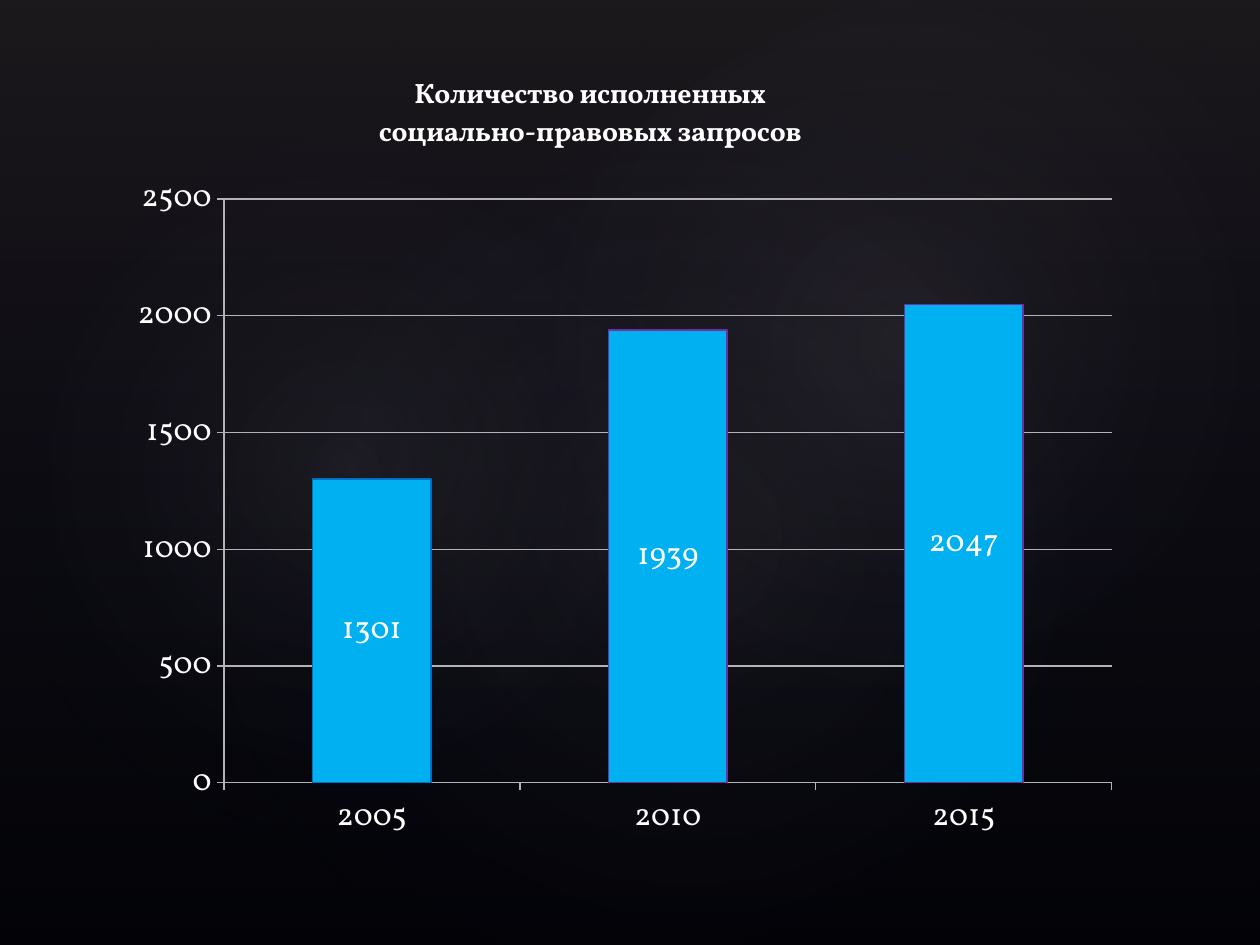
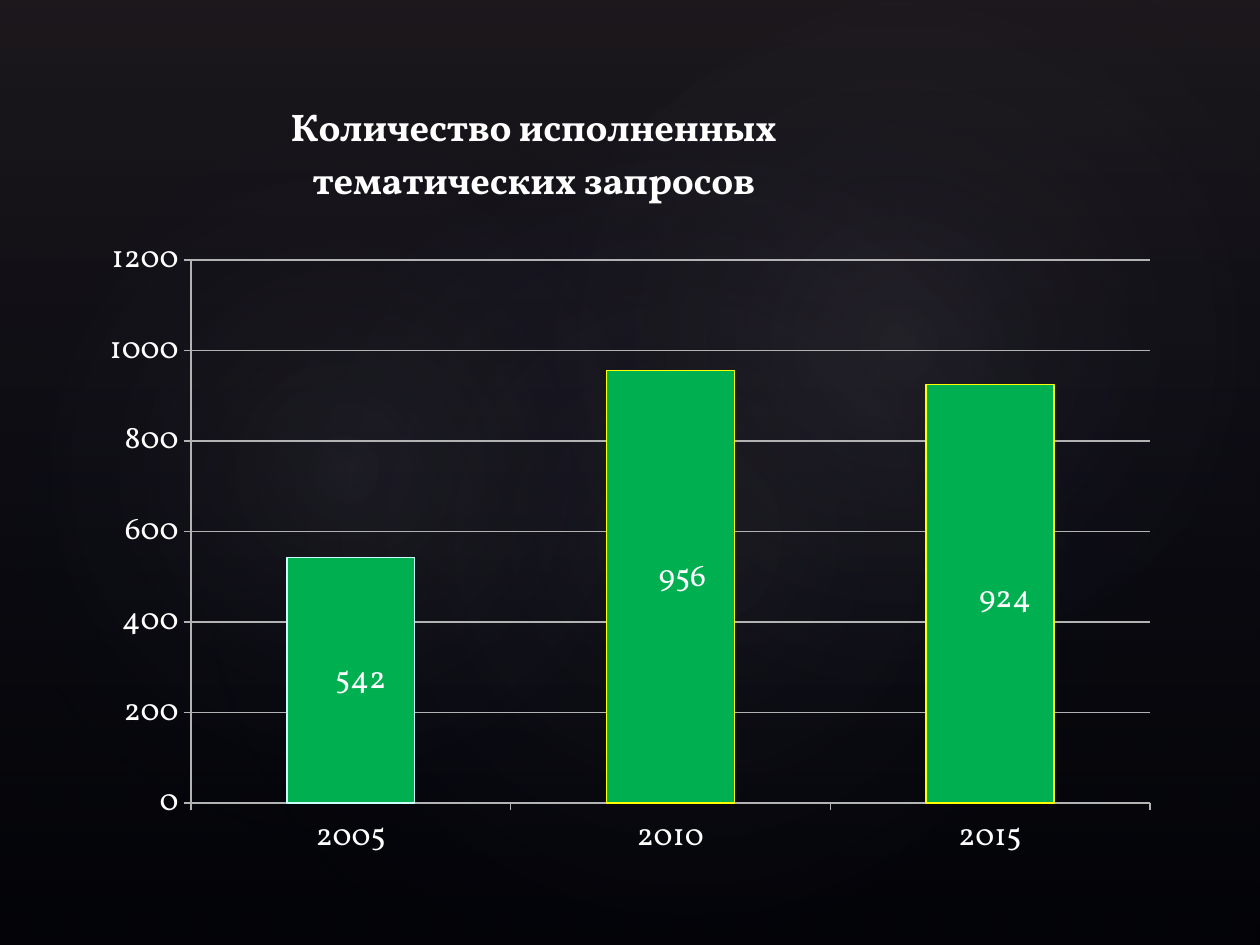
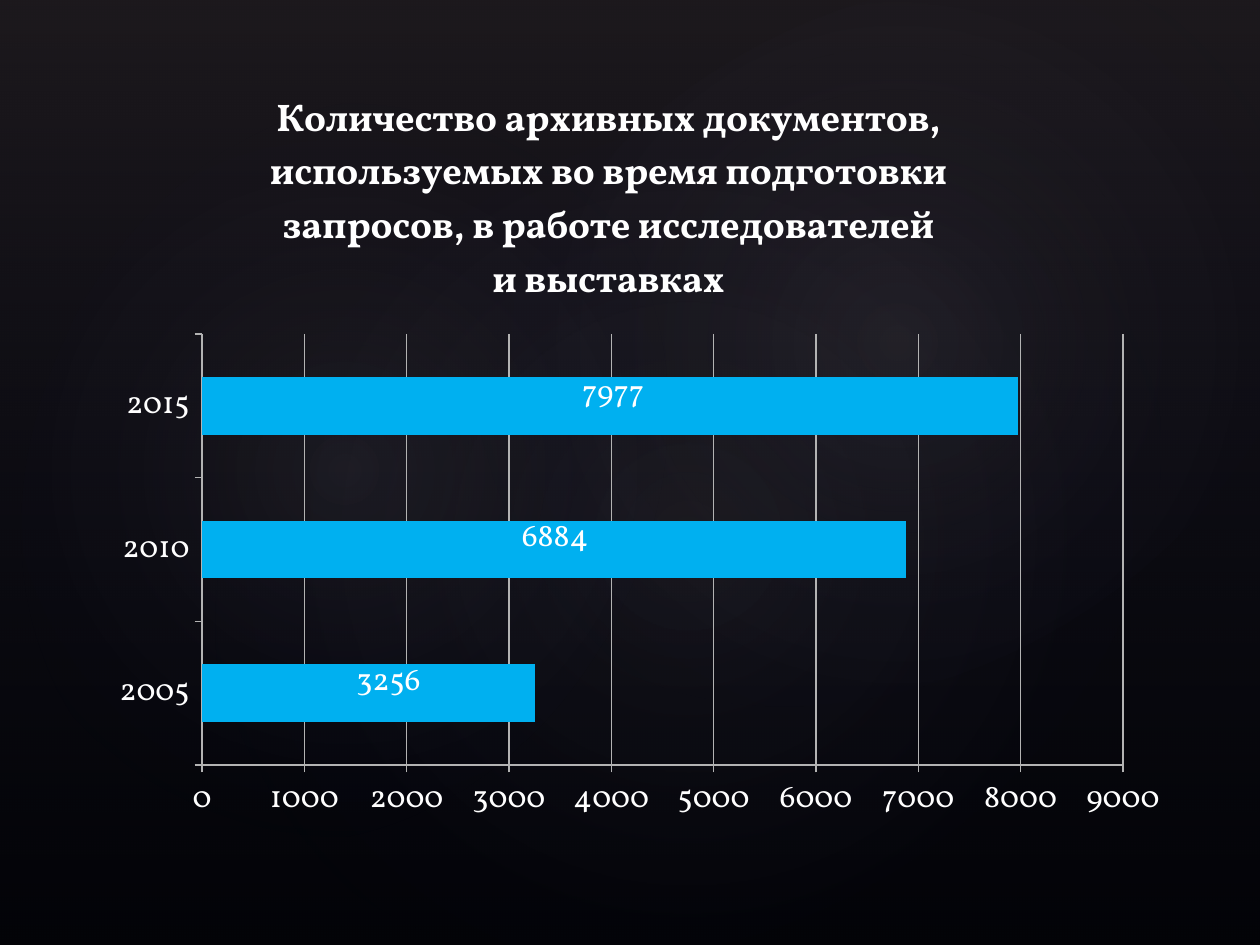
import collections

import pptx
import pptx.chart.data
import pptx.dml.color
import pptx.enum.chart
import pptx.enum.shapes
import pptx.enum.text
import pptx.oxml
import pptx.oxml.ns
import pptx.util

RGB = pptx.dml.color.RGBColor
XL = pptx.enum.chart.XL_CHART_TYPE
SHAPE = pptx.enum.shapes.MSO_SHAPE
qn = pptx.oxml.ns.qn
Box = collections.namedtuple("Box", "x y w h")

BLACK = RGB(0x00, 0x00, 0x00)
WHITE = RGB(0xFF, 0xFF, 0xFF)
GRID = RGB(0xB3, 0xB3, 0xB3)
OLIVE = RGB(0x50, 0x46, 0x52)
NAVY = RGB(0x24, 0x28, 0x52)
MIST = RGB(0xC4, 0xBC, 0xC6)
BLUE = RGB(0x00, 0xB0, 0xF0)
GREEN = RGB(0x00, 0xB0, 0x50)
STEEL = RGB(0x00, 0x70, 0xC0)
PURPLE = RGB(0x70, 0x30, 0xA0)
PALE = RGB(0xCC, 0xFF, 0xFF)
YELLOW = RGB(0xFF, 0xFF, 0x00)

FONT = "Vollkorn"
EMU_PER_PX = 914400 / 126
SLIDE = Box(0, 0, 1260, 945)
GLOWS = [
    (Box(189, 144, 998, 786), 328.7, 7),
    (Box(-38, 161, 764, 617), 294.3, 8),
    (Box(451, 16, 893, 655), 328.7, 8),
]
YEARS = ["2005", "2010", "2015"]


def px(n):
    return pptx.util.Emu(round(n * EMU_PER_PX))


def emu(box):
    return [px(n) for n in box]


def style_font(font, size=18, color=WHITE, bold=False):
    font.name = FONT
    font.size = pptx.util.Pt(size)
    font.bold = bold
    font.color.rgb = color


def write_text(tf, text, align=pptx.enum.text.PP_ALIGN.CENTER, **style):
    for i, line in enumerate(text.split("\n")):
        p = tf.add_paragraph() if i else tf.paragraphs[0]
        p.alignment = align
        r = p.add_run()
        r.text = line
        style_font(r.font, **style)


def gradient_shape(slide, kind, box, stops, direction, rotation=0):
    s = slide.shapes.add_shape(kind, *emu(box))
    s.rotation = rotation
    s.shadow.inherit = False
    s.line.fill.background()
    s.fill.background()
    marks = "".join(
        f'<a:gs pos="{pos * 1000}"><a:srgbClr val="{color}">'
        f'<a:alpha val="{alpha * 1000}"/></a:srgbClr></a:gs>'
        for pos, color, alpha in stops
    )
    fill = pptx.oxml.parse_xml(
        f'<a:gradFill {pptx.oxml.ns.nsdecls("a")} rotWithShape="1">'
        f"<a:gsLst>{marks}</a:gsLst>{direction}</a:gradFill>"
    )
    props = s.element.spPr
    props.replace(props.find(qn("a:noFill")), fill)


def backdrop(slide):
    slide.background.fill.solid()
    slide.background.fill.fore_color.rgb = BLACK
    gradient_shape(slide, SHAPE.RECTANGLE, SLIDE, [(0, OLIVE, 36), (100, NAVY, 10)],
                   '<a:lin ang="5400000" scaled="0"/>')
    centre = ('<a:path path="circle"><a:fillToRect l="50000" t="50000" '
              'r="50000" b="50000"/></a:path>')
    for box, rotation, alpha in GLOWS:
        gradient_shape(slide, SHAPE.OVAL, box, [(0, MIST, alpha), (58, NAVY, 0), (100, NAVY, 0)],
                       centre, rotation)


def set_layout(parent, index, **values):
    for old in parent.findall(qn("c:layout")):
        parent.remove(old)
    items = "".join(f'<c:{key} val="{value}"/>' for key, value in values.items())
    parent.insert(index, pptx.oxml.parse_xml(
        f'<c:layout {pptx.oxml.ns.nsdecls("c")}>'
        f"<c:manualLayout>{items}</c:manualLayout></c:layout>"
    ))


def share(box, x, y):
    return {"x": round(x / box.w, 4), "y": round(y / box.h, 4)}


def style_axis(axis):
    axis.major_tick_mark = pptx.enum.chart.XL_TICK_MARK.OUTSIDE
    axis.minor_tick_mark = pptx.enum.chart.XL_TICK_MARK.NONE
    axis.format.line.color.rgb = GRID
    axis.format.line.width = pptx.util.Pt(0.75)
    style_font(axis.tick_labels.font)


def style_bars(chart, box, color, outlines, shifts):
    plot = chart.plots[0]
    plot.gap_width = 150
    plot.overlap = 100
    plot.vary_by_categories = False
    series = plot.series[0]
    series.invert_if_negative = False
    series.format.fill.solid()
    series.format.fill.fore_color.rgb = color
    series.data_labels.show_value = True
    style_font(series.data_labels.font)
    for i, outline in enumerate(outlines):
        point = series.points[i].format
        point.fill.solid()
        point.fill.fore_color.rgb = color
        point.line.color.rgb = outline
        point.line.width = pptx.util.Pt(0.75)
    for i in range(len(shifts)):
        style_font(series.points[i].data_label.font)
    for label, shift in zip(chart.element.iter(qn("c:dLbl")), shifts):
        set_layout(label, 1, **share(box, *shift))


def chart_slide(prs, kind, box, plot, title, title_at, values, top, step, color,
                title_size=22, outlines=(), shifts=()):
    slide = prs.slides.add_slide(prs.slide_layouts[6])
    backdrop(slide)
    data = pptx.chart.data.CategoryChartData()
    data.categories = YEARS
    data.add_series("Series 1", values)
    chart = slide.shapes.add_chart(kind, *emu(box), data).chart
    style_font(chart.font)
    chart.has_legend = False
    chart.has_title = True
    write_text(chart.chart_title.text_frame, title, size=title_size, bold=True)
    chart.chart_title.include_in_layout = False
    set_layout(chart.element.find(".//" + qn("c:title")), 1,
               xMode="edge", yMode="edge", **share(box, *title_at))
    set_layout(chart.element.find(".//" + qn("c:plotArea")), 0,
               layoutTarget="inner", xMode="edge", yMode="edge", **share(box, plot.x, plot.y),
               w=round(plot.w / box.w, 4), h=round(plot.h / box.h, 4))
    style_axis(chart.category_axis)
    axis = chart.value_axis
    style_axis(axis)
    axis.minimum_scale = 0
    axis.maximum_scale = top
    axis.major_unit = step
    axis.has_major_gridlines = True
    axis.major_gridlines.format.line.color.rgb = GRID
    axis.major_gridlines.format.line.width = pptx.util.Pt(0.75)
    style_bars(chart, box, color, outlines, shifts)


def main():
    prs = pptx.Presentation()
    prs.slide_width = px(SLIDE.w)
    prs.slide_height = px(SLIDE.h)
    chart_slide(prs, XL.COLUMN_STACKED, Box(118, 49, 1014, 808), Box(106, 150, 888, 584),
                "Количество исполненных\nсоциально-правовых запросов", (257, 22),
                [1301, 1939, 2047], 2500, 500, BLUE, title_size=16,
                outlines=[STEEL, PURPLE, PURPLE])
    chart_slide(prs, XL.COLUMN_STACKED, Box(88, 78, 1082, 798), Box(103, 182, 959, 543),
                "Количество исполненных\nтематических запросов", (199, 20),
                [542, 956, 924], 1200, 200, GREEN,
                outlines=[PALE, YELLOW, YELLOW], shifts=[(10, 0), (12, -8), (15, 6)])
    chart_slide(prs, XL.BAR_STACKED, Box(98, 69, 1082, 767), Box(104, 265, 921, 431),
                "Количество архивных документов,\nиспользуемых во время подготовки\n"
                "запросов, в работе исследователей\nи выставках", (168, 19),
                [3256, 6884, 7977], 9000, 1000, BLUE,
                shifts=[(20, -11), (1, -11), (3, -11)])
    prs.save("out.pptx")


if __name__ == "__main__":
    main()
